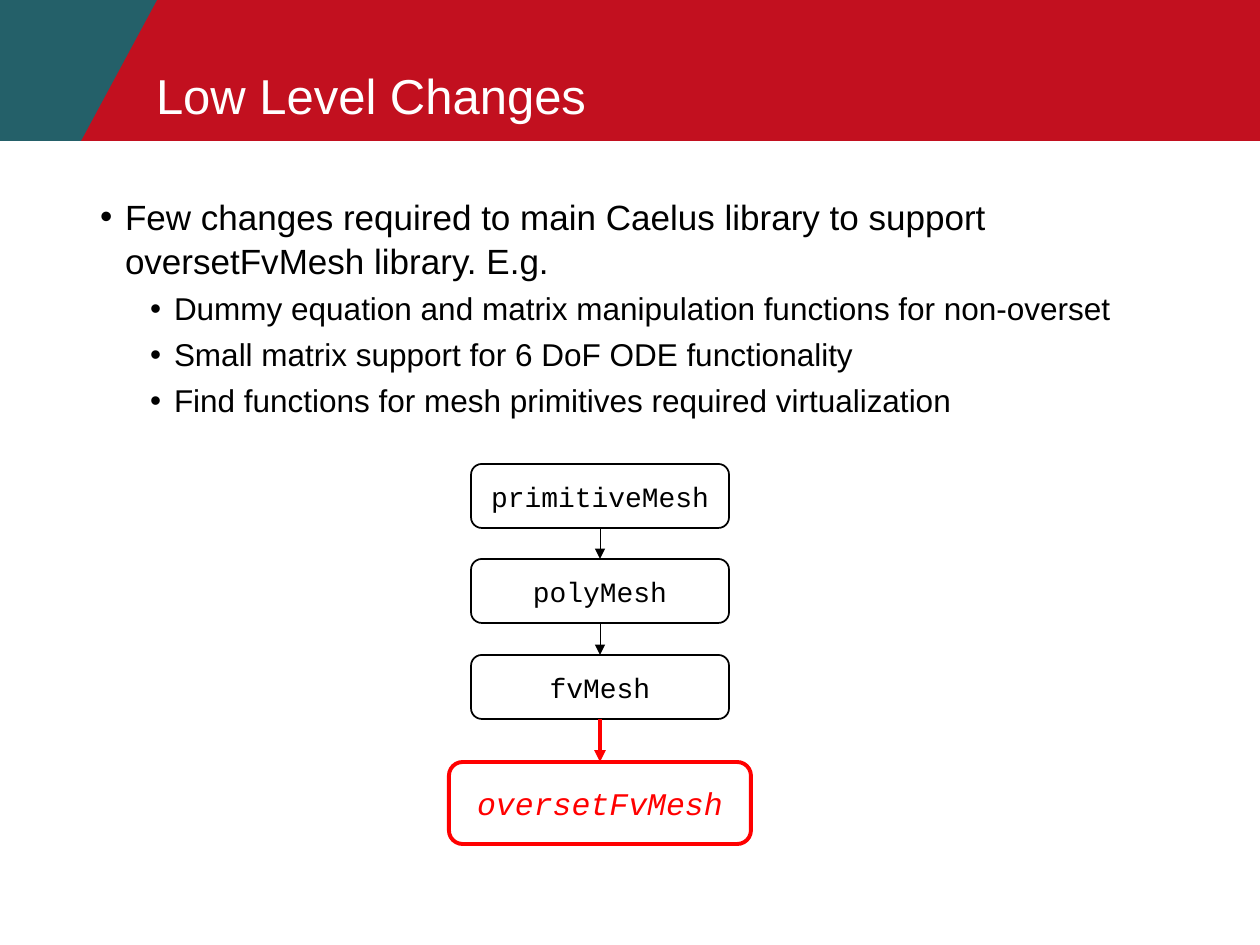
"""Build the Low Level Changes slide with its mesh class chain."""
from dataclasses import dataclass
from itertools import pairwise

from pptx import Presentation
from pptx.dml.color import RGBColor
from pptx.enum.shapes import MSO_CONNECTOR, MSO_SHAPE
from pptx.enum.text import MSO_ANCHOR, MSO_AUTO_SIZE, PP_ALIGN
from pptx.oxml.ns import qn
from pptx.shapes.autoshape import Shape
from pptx.slide import Slide
from pptx.util import Emu, Pt
from lxml import etree

BLACK = RGBColor(0x00, 0x00, 0x00)
WHITE = RGBColor(0xFF, 0xFF, 0xFF)
RED = RGBColor(0xFF, 0x00, 0x00)
CRIMSON = RGBColor(0xC2, 0x10, 0x1F)
TEAL = RGBColor(0x24, 0x60, 0x69)

RECT = MSO_SHAPE.RECTANGLE
ROUND = MSO_SHAPE.FLOWCHART_ALTERNATE_PROCESS
STRAIGHT = MSO_CONNECTOR.STRAIGHT
LEFT, CENTER = PP_ALIGN.LEFT, PP_ALIGN.CENTER
MIDDLE, BOTTOM = MSO_ANCHOR.MIDDLE, MSO_ANCHOR.BOTTOM
NO_FIT = MSO_AUTO_SIZE.NONE

SCALE = 914400 / 126
WIDTH, HEIGHT = 1260, 945
BAND = 141
AXIS = 600


@dataclass
class Item:
    text: str
    level: int
    size: int
    left: int
    hang: int


@dataclass
class Node:
    text: str
    top: int
    width: int = 258
    height: int = 64
    size: int = 16
    color: RGBColor = BLACK
    line: float = 1
    link: float = 0.5
    italic: bool = False


ITEMS = [
    Item("Few changes required to main Caelus library to support "
         "oversetFvMesh library. E.g.", 0, 20, 25, 25),
    *(Item(text, 1, 18, 74, 24) for text in (
        "Dummy equation and matrix manipulation functions for non-overset",
        "Small matrix support for 6 DoF ODE functionality",
        "Find functions for mesh primitives required virtualization")),
]

NODES = [
    Node("primitiveMesh", 464),
    Node("polyMesh", 559),
    Node("fvMesh", 655),
    Node("oversetFvMesh", 762, 302, 82, 18, RED, 2.25, 2.25, True),
]


def px(count: int) -> Emu:
    """Turn pixels into EMU."""
    return Emu(round(count * SCALE))


def place(shape: Shape, left: int, top: int, width: int, height: int) -> None:
    """Move and size a shape."""
    shape.left, shape.top = px(left), px(top)
    shape.width, shape.height = px(width), px(height)


def paint(shape: Shape, fill: RGBColor) -> None:
    """Give a shape a plain fill without line or shadow."""
    shape.shadow.inherit = False
    shape.fill.solid()
    shape.fill.fore_color.rgb = fill
    shape.line.fill.background()


def style(para, size: int, color: RGBColor, face: str = "Arial") -> None:
    """Format the runs of a paragraph."""
    for run in para.runs:
        run.font.size, run.font.name = Pt(size), face
        run.font.color.rgb = color


def draw_band(slide: Slide) -> None:
    """Draw the header band behind the title."""
    band = slide.shapes.add_shape(RECT, 0, 0, px(WIDTH), px(BAND))
    paint(band, CRIMSON)
    pen = slide.shapes.build_freeform(0, 0, SCALE)
    pen.add_line_segments([(157, 0), (81, BAND), (0, BAND)])
    flag = pen.convert_to_shape()
    paint(flag, TEAL)
    for shape in (band, flag):
        slide.shapes.title._element.addprevious(shape._element)


def write_title(slide: Slide, text: str) -> None:
    """Fill the title placeholder."""
    title = slide.shapes.title
    place(title, 156, 8, 1012, 123)
    frame = title.text_frame
    frame.text = text
    frame.auto_size = NO_FIT
    frame.vertical_anchor = BOTTOM
    frame.margin_left = frame.margin_right = 0
    para = frame.paragraphs[0]
    para.alignment = LEFT
    style(para, 28, WHITE)


def write_list(slide: Slide, items: list[Item]) -> None:
    """Fill the body placeholder with bullets."""
    body = slide.placeholders[1]
    place(body, 100, 193, 1120, 678)
    frame = body.text_frame
    frame.text = "\n".join(item.text for item in items)
    frame.auto_size = NO_FIT
    frame.margin_left = frame.margin_right = 0
    frame.margin_top = frame.margin_bottom = 0
    for rank, (para, item) in enumerate(zip(frame.paragraphs, items)):
        para.level = item.level
        para.line_spacing = 1.05
        para.space_before = Pt(item.size * 0.2 if rank else 0)
        props = para._p.get_or_add_pPr()
        props.set("marL", str(px(item.left)))
        props.set("indent", str(px(-item.hang)))
        etree.SubElement(props, qn("a:buFont"), typeface="Arial")
        etree.SubElement(props, qn("a:buChar"), char="•")
        style(para, item.size, BLACK)


def draw_node(slide: Slide, node: Node) -> None:
    """Draw one class box."""
    box = slide.shapes.add_shape(ROUND, 0, 0, 0, 0)
    place(box, AXIS - node.width // 2, node.top, node.width, node.height)
    paint(box, WHITE)
    box.line.color.rgb = node.color
    box.line.width = Pt(node.line)
    frame = box.text_frame
    frame.text = node.text
    frame.word_wrap = True
    frame.vertical_anchor = MIDDLE
    para = frame.paragraphs[0]
    para.alignment = CENTER
    style(para, node.size, node.color, "Courier New")
    para.runs[0].font.italic = node.italic


def draw_link(slide: Slide, base: Node, child: Node) -> None:
    """Draw the arrow from a class to its child."""
    link = slide.shapes.add_connector(
        STRAIGHT, px(AXIS), px(base.top + base.height), px(AXIS), px(child.top))
    link.line.color.rgb = child.color
    link.line.width = Pt(child.link)
    etree.SubElement(link.line._get_or_add_ln(), qn("a:tailEnd"), type="triangle")
    etree.SubElement(link._element.spPr, qn("a:effectLst"))


def main() -> None:
    """Build and save the slide."""
    deck = Presentation()
    deck.slide_width, deck.slide_height = px(WIDTH), px(HEIGHT)
    slide = deck.slides.add_slide(deck.slide_layouts[1])
    draw_band(slide)
    write_title(slide, "Low Level Changes")
    write_list(slide, ITEMS)
    for node in NODES:
        draw_node(slide, node)
    for base, child in pairwise(NODES):
        draw_link(slide, base, child)
    deck.save("out.pptx")


if __name__ == "__main__":
    main()
